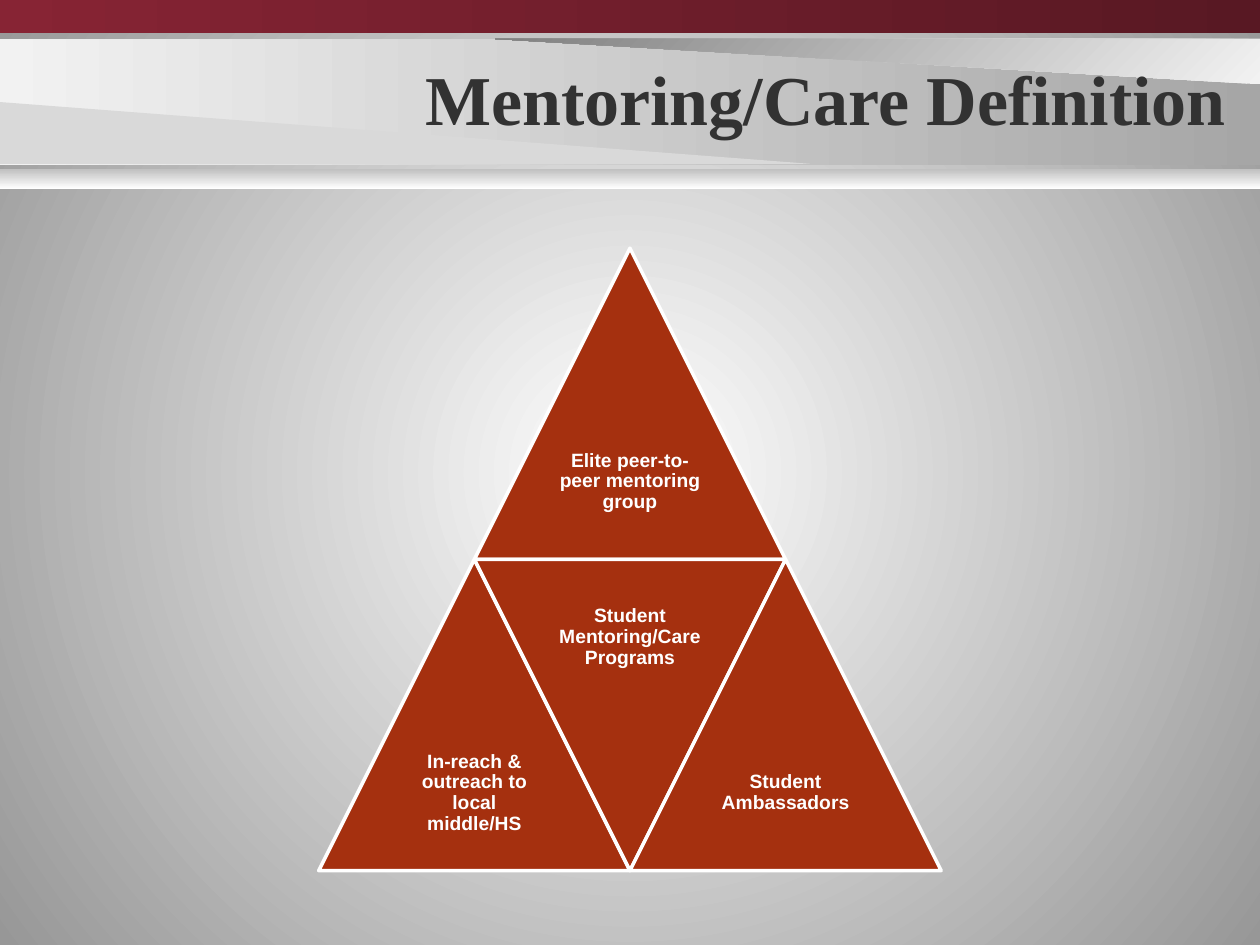
from lxml.etree import SubElement
from pptx import Presentation
from pptx.dml.color import RGBColor
from pptx.enum.shapes import MSO_SHAPE
from pptx.enum.text import MSO_ANCHOR, PP_ALIGN
from pptx.oxml.ns import qn
from pptx.util import Inches, Pt

COLUMNS, ROWS = 100, 75
COLORS = {
    "white": "FFFFFF",
    "edge": "979797",
    "light": "F2F2F2",
    "pale": "D9D9D9",
    "silver": "BFBFBF",
    "gray": "A6A6A6",
    "dark": "808080",
    "wine": "872434",
    "deep wine": "581823",
    "title": "323232",
    "rust": "A5300F",
}


def color(name):
    return RGBColor.from_string(COLORS[name])


class SlideBuilder:
    heading_font = "Times New Roman"
    label_font = "Arial"

    def __init__(self, presentation):
        self.column = presentation.slide_width / COLUMNS
        self.row = presentation.slide_height / ROWS
        self.slide = presentation.slides.add_slide(presentation.slide_layouts[6])

    def place(self, left, top, width, height):
        return (round(left * self.column), round(top * self.row),
                round(width * self.column), round(height * self.row))

    def paint(self, fill, names, angle=0):
        if len(names) == 1:
            fill.solid()
            fill.fore_color.rgb = color(names[0])
            return
        fill.gradient()
        fill.gradient_angle = angle
        for stop, name, position in zip(fill.gradient_stops, names, (0, 1)):
            stop.color.rgb = color(name)
            stop.position = position

    def radial_background(self, *names):
        background = self.slide.background
        self.paint(background.fill, names)
        gradient = next(self.slide.element.iter(qn("a:gradFill")))
        linear = gradient.find(qn("a:lin"))
        path = SubElement(gradient, qn("a:path"), path="circle")
        SubElement(path, qn("a:fillToRect"), l="50000", t="50000", r="50000", b="50000")
        gradient.replace(linear, path)

    def finish(self, shape, names, angle=0):
        shape.shadow.inherit = False
        self.paint(shape.fill, names, angle)
        shape.line.fill.background()

    def band(self, top, height, *names, angle=0):
        shape = self.slide.shapes.add_shape(
            MSO_SHAPE.RECTANGLE, *self.place(0, top, COLUMNS, height))
        self.finish(shape, names, angle)

    def wedge(self, points, *names, angle=0):
        start, *others = [(round(x * self.column), round(y * self.row)) for x, y in points]
        builder = self.slide.shapes.build_freeform(*start, scale=1.0)
        builder.add_line_segments(others, close=True)
        self.finish(builder.convert_to_shape(), names, angle)

    def triangle(self, left, top, side, rotation):
        shape = self.slide.shapes.add_shape(
            MSO_SHAPE.ISOSCELES_TRIANGLE, *self.place(left, top, side, side))
        self.finish(shape, ["rust"])
        shape.rotation = rotation
        shape.line.color.rgb = color("white")
        shape.line.width = Pt(2)

    def text(self, wording, box, font_name, size, color_name, alignment,
             margins=(0.1, 0.05), spacing=1.0):
        frame = self.slide.shapes.add_textbox(*self.place(*box)).text_frame
        frame.word_wrap = True
        frame.vertical_anchor = MSO_ANCHOR.MIDDLE
        frame.margin_left = frame.margin_right = Inches(margins[0])
        frame.margin_top = frame.margin_bottom = Inches(margins[1])
        frame.text = wording
        paragraph = frame.paragraphs[0]
        paragraph.alignment = alignment
        paragraph.line_spacing = spacing
        font = paragraph.runs[0].font
        font.name, font.size, font.bold = font_name, Pt(size), True
        font.color.rgb = color(color_name)

    def title(self, wording, box):
        self.text(wording, box, self.heading_font, 40, "title", PP_ALIGN.RIGHT)

    def pyramid_part(self, wording, left, top, side, inverted=False):
        self.triangle(left, top, side, 180 if inverted else 0)
        label_top = top if inverted else top + side / 2
        self.text(wording, (left + side / 4, label_top, side / 2, side / 2),
                  self.label_font, 11, "white", PP_ALIGN.CENTER, (0.05, 0.05), 0.9)


def main():
    presentation = Presentation()
    presentation.slide_width, presentation.slide_height = Inches(10), Inches(7.5)
    builder = SlideBuilder(presentation)

    builder.radial_background("white", "edge")
    builder.band(3.1, 10, "light", "gray")
    builder.wedge([(39.3, 3.1), (COLUMNS, 6.7), (COLUMNS, 3.1)], "light", "dark", angle=135)
    builder.wedge([(0, 13), (64.3, 13), (0, 8.1)], "pale")
    builder.band(0, 2.6, "wine", "deep wine")
    builder.band(13.4, 1.6, "silver", "white", angle=270)
    builder.title("Mentoring/Care Definition", (25.8, 3, 72.5, 9.5))

    side, top, center = 24.7, 19.7, COLUMNS / 2
    base = top + side
    builder.pyramid_part("Elite peer-to-peer mentoring group", center - side / 2, top, side)
    builder.pyramid_part("In-reach & outreach to local middle/HS", center - side, base, side)
    builder.pyramid_part("Student Mentoring/Care Programs", center - side / 2, base, side, True)
    builder.pyramid_part("Student Ambassadors", center, base, side)

    presentation.save("out.pptx")


if __name__ == "__main__":
    main()
